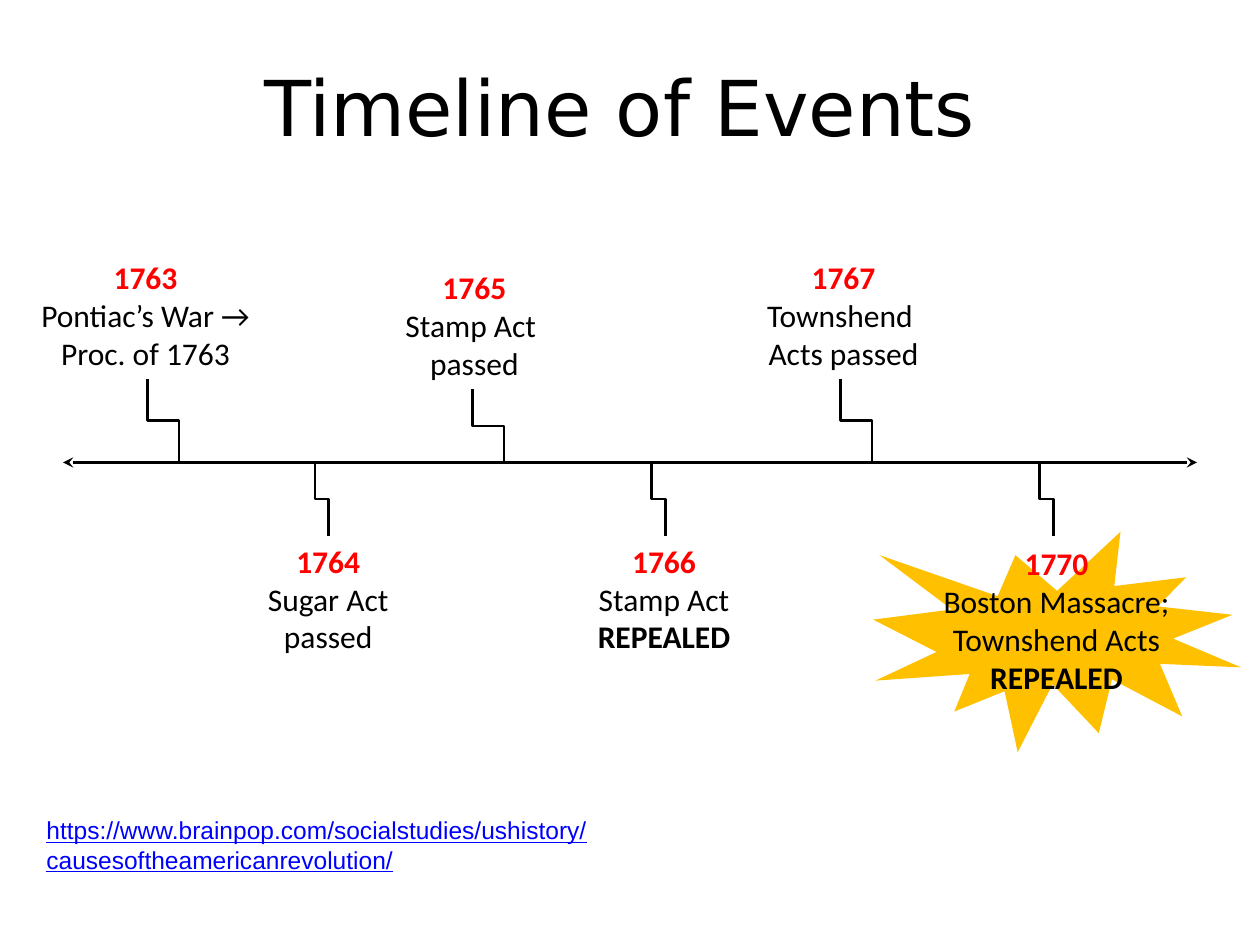
"""Builds a one-slide timeline of colonial events from 1763 to 1770."""
from dataclasses import dataclass

from lxml import etree
from pptx import Presentation
from pptx.dml.color import RGBColor
from pptx.enum.shapes import MSO_CONNECTOR, MSO_SHAPE
from pptx.enum.text import PP_ALIGN
from pptx.oxml.ns import qn
from pptx.util import Inches, Pt

CENTER = PP_ALIGN.CENTER
LEFT = PP_ALIGN.LEFT
STRAIGHT = MSO_CONNECTOR.STRAIGHT
ELBOW = MSO_CONNECTOR.ELBOW
BURST = MSO_SHAPE.EXPLOSION1

COLUMNS, ROWS = 10, 7.5
CELL = Inches(1)


@dataclass(frozen=True)
class Theme:
    """Colours, fonts and sizes of the slide."""
    ink: RGBColor = RGBColor(0, 0, 0)
    year: RGBColor = RGBColor(255, 0, 0)
    burst: RGBColor = RGBColor(255, 192, 0)
    link: RGBColor = RGBColor(0, 0, 255)
    title_font: str = "DejaVu Sans"
    label_font: str = "Calibri"
    link_font: str = "Arial"
    title_size: Pt = Pt(44)
    label_size: Pt = Pt(18)
    link_size: Pt = Pt(14)
    line_width: Pt = Pt(1.5)


@dataclass(frozen=True)
class Event:
    """A label box and the column where its stem meets the axis."""
    lines: tuple
    box: tuple
    tick: float


THEME = Theme()
TITLE_BOX = (2, 0.42, 5.92, 0.84)
AXIS_BOX = (0.5, 3.67, 9, 0)
BURST_BOX = (6.93, 4.22, 2.92, 1.75)
LINK_BOX = (0.27, 6.42, 5, 0.57)
STEM_ABOVE, STEM_BELOW = 0.25, 0.11
STEM_FOOT = 4.25
EVENTS = (
    Event(("1763", "Pontiac’s War →", "Proc. of 1763"), (0.21, 2, 1.89, 1.01), 1.42),
    Event(("1764", "Sugar Act", "passed"), (2.02, 4.25, 1.17, 1.01), 2.5),
    Event(("1765", "Stamp Act ", "passed"), (3.11, 2.08, 1.31, 1.01), 4),
    Event(("1766", "Stamp Act", "REPEALED"), (4.64, 4.25, 1.26, 1.01), 5.17),
    Event(("1767", "Townshend ", "Acts passed"), (5.98, 2, 1.43, 1.01), 6.92),
    Event(("1770", "Boston Massacre;", "Townshend Acts", "REPEALED"),
          (7.38, 4.27, 2.01, 1.31), 8.25),
)


def grid(*cells):
    """Convert grid positions to slide lengths."""
    return [int(c * CELL) for c in cells]


def set_font(p, name, size, color, bold=False):
    """Style a whole paragraph."""
    font = p.font
    font.name, font.size, font.bold = name, size, bold
    font.color.rgb = color


def add_text(slide, box, lines, align, wrap=True):
    """Add a text box with one paragraph per line."""
    tf = slide.shapes.add_textbox(*grid(*box)).text_frame
    tf.word_wrap = wrap
    tf.text = "\n".join(lines)
    for p in tf.paragraphs:
        p.alignment = align
    return tf.paragraphs


def add_line(slide, kind, ends):
    """Add a plain connector without a shadow."""
    c = slide.shapes.add_connector(kind, *grid(*ends))
    c.line.color.rgb = THEME.ink
    c.line.width = THEME.line_width
    etree.SubElement(c._element.spPr, qn("a:effectLst"))
    return c


def add_title(slide, box):
    """Place the slide title."""
    p, = add_text(slide, box, ["Timeline of Events"], LEFT)
    set_font(p, THEME.title_font, THEME.title_size, THEME.ink)


def add_burst(slide, box):
    """Place the burst behind the final event."""
    sp = slide.shapes.add_shape(BURST, *grid(*box))
    sp.shadow.inherit = False
    sp.fill.solid()
    sp.fill.fore_color.rgb = THEME.burst
    sp.line.fill.background()


def add_axis(slide, box):
    """Place the axis with an arrowhead at each end."""
    x, y, w, h = box
    c = add_line(slide, STRAIGHT, (x, y, x + w, y + h))
    ln = c.line._get_or_add_ln()
    for end in ("a:headEnd", "a:tailEnd"):
        etree.SubElement(ln, qn(end), type="stealth")


def add_stem(slide, start, end):
    """Join two points by an elbow that leaves and arrives vertically."""
    (x1, y1), (x2, y2) = start, end
    cx, cy = (x1 + x2) / 2, (y1 + y2) / 2
    half_run, half_rise = abs(x2 - x1) / 2, abs(y2 - y1) / 2
    c = add_line(slide, ELBOW, (cx + half_rise, cy - half_run,
                                cx - half_rise, cy + half_run))
    degrees = 270 if y1 < y2 else 90
    c._element.spPr.find(qn("a:xfrm")).set("rot", str(degrees * 60000))


def add_event(slide, event, axis_y):
    """Place an event label and the stem tying it to the axis."""
    paragraphs = add_text(slide, event.box, event.lines, CENTER, wrap=False)
    for i, p in enumerate(paragraphs):
        color = THEME.ink if i else THEME.year
        bold = i == 0 or p.text.isupper()
        set_font(p, THEME.label_font, THEME.label_size, color, bold)
    _, top, _, height = event.box
    if top < axis_y:
        start = (event.tick - STEM_ABOVE, top + height)
    else:
        start = (event.tick + STEM_BELOW, STEM_FOOT)
    add_stem(slide, start, (event.tick, axis_y))


def add_link(slide, box):
    """Place the web address."""
    url = "https://www.brainpop.com/socialstudies/ushistory/causesoftheamericanrevolution/"
    p, = add_text(slide, box, [url], LEFT)
    set_font(p, THEME.link_font, THEME.link_size, THEME.link)
    p.font.underline = True


def main():
    """Build and save the slide."""
    prs = Presentation()
    prs.slide_width, prs.slide_height = grid(COLUMNS, ROWS)
    slide = prs.slides.add_slide(prs.slide_layouts[6])
    add_burst(slide, BURST_BOX)
    add_axis(slide, AXIS_BOX)
    for event in EVENTS:
        add_event(slide, event, AXIS_BOX[1])
    add_title(slide, TITLE_BOX)
    add_link(slide, LINK_BOX)
    prs.save("out.pptx")


if __name__ == "__main__":
    main()
